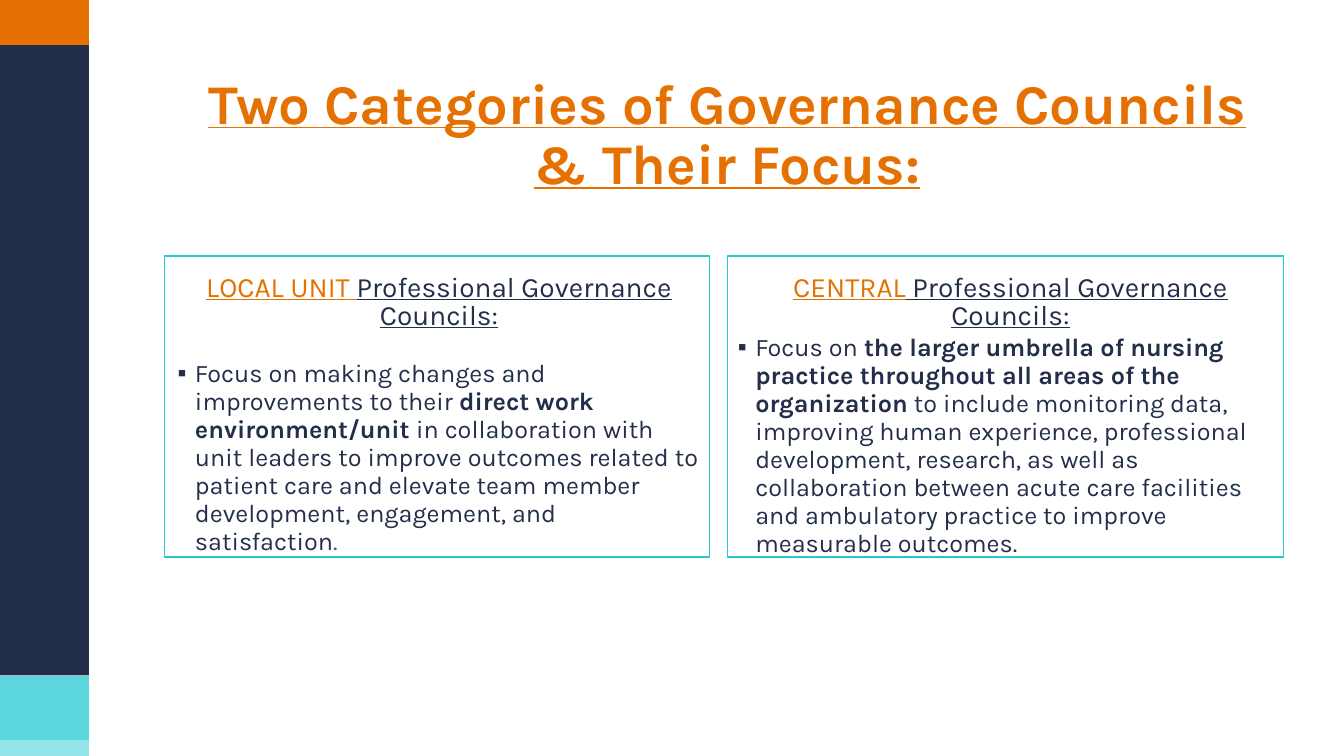
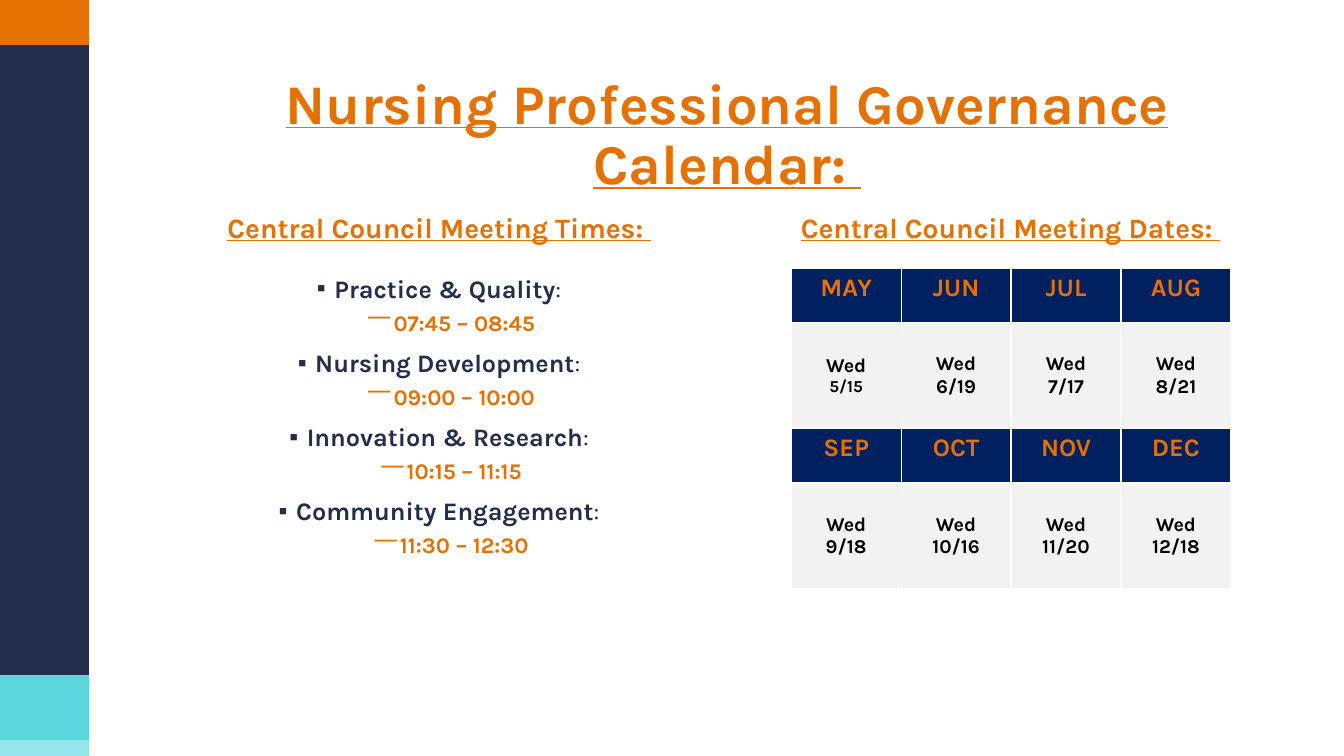
from lxml.etree import SubElement
from pptx import Presentation
from pptx.dml.color import RGBColor
from pptx.enum.shapes import MSO_SHAPE
from pptx.enum.text import MSO_ANCHOR, MSO_AUTO_SIZE, PP_ALIGN
from pptx.oxml.ns import qn
from pptx.util import Cm, Pt

FONT = "Karla"
ORANGE = RGBColor(0xE5, 0x71, 0x02)
NAVY = RGBColor(0x22, 0x2E, 0x4A)
TEAL = RGBColor(0x25, 0xC9, 0xD5)
AQUA = RGBColor(0x5C, 0xD6, 0xDD)
PALE_AQUA = RGBColor(0x93, 0xE5, 0xE9)
GRAY = RGBColor(0x59, 0x59, 0x59)
MONTH_BLUE = RGBColor(0x00, 0x20, 0x60)
DATE_GRAY = RGBColor(0xF2, 0xF2, 0xF2)
BLACK = RGBColor(0, 0, 0)

# Side bands: top and height in cm, colour
BAND_WIDTH = 2.24
BANDS = [(0, 1.14, ORANGE), (1.14, 15.88, NAVY),
         (17.04, 1.61, AQUA), (18.65, 0.4, PALE_AQUA)]

# Columns: left and width in cm, with their heading and body placeholders
COLUMNS = [(4.22, 13.69, 1, 2), (18.34, 14.25, 3, 4)]
HEADING_HEIGHT, BODY_HEIGHT = 1.47, 8.94

FOCUS_TITLE = "Two Categories of Governance Councils & Their Focus:"
# Runs are (text, colour, bold)
COUNCILS = [
    {"heading": [("LOCAL UNIT ", ORANGE, False),
                 ("Professional Governance Councils:", NAVY, False)],
     "focus": [("Focus on making changes and improvements to their ", NAVY, False),
               ("direct work environment/unit ", NAVY, True),
               ("in collaboration with unit leaders to improve outcomes related to "
                "patient care and elevate team member development, engagement, "
                "and satisfaction", NAVY, False),
               (".", GRAY, False)],
     "focus_top": 8.94, "frame": (4.14, 13.74)},
    {"heading": [("CENTRAL", ORANGE, False),
                 (" Professional Governance Councils:", NAVY, False)],
     "focus": [("Focus on ", NAVY, False),
               ("the larger umbrella of nursing practice throughout all areas of "
                "the organization", NAVY, True),
               (" to include monitoring data, improving human experience, "
                "professional development, research, as well as collaboration "
                "between acute care facilities and ambulatory practice to improve "
                "measurable outcomes.", NAVY, False)],
     "focus_top": 8.28, "frame": (18.34, 14)},
]
FRAME_TOP, FRAME_HEIGHT = 6.45, 7.59

CALENDAR_TITLE = "Nursing Professional Governance Calendar: "
CALENDAR_HEADINGS = ["Central Council Meeting Times: ",
                     "Central Council Meeting Dates: "]
MEETING_TIMES = [("Practice & Quality", "07:45 – 08:45"),
                 ("Nursing Development", "09:00 – 10:00"),
                 ("Innovation & Research", "10:15 – 11:15"),
                 ("Community Engagement", "11:30 – 12:30")]
MEETING_DATES = [[("MAY", "5/15"), ("JUN", "6/19"), ("JUL", "7/17"), ("AUG", "8/21")],
                 [("SEP", "9/18"), ("OCT", "10/16"), ("NOV", "11/20"), ("DEC", "12/18")]]
SMALL_DATE = "5/15"
MONTH_WIDTH, MONTH_HEIGHT, DATE_HEIGHT = 2.77, 1.37, 2.67


def place(shape, left, top, width, height):
    shape.left, shape.top = Cm(left), Cm(top)
    shape.width, shape.height = Cm(width), Cm(height)


def add_runs(paragraph, runs, size, underline=False):
    for text, color, bold in runs:
        run = paragraph.add_run()
        run.text = text
        font = run.font
        font.name, font.size = FONT, Pt(size)
        font.bold, font.underline = bold, underline
        font.color.rgb = color


def set_bullet(paragraph, mark, margin=0.0, hanging=0.0):
    """Give the paragraph a bullet, or none when mark is empty."""
    properties = paragraph._p.get_or_add_pPr()
    properties.set("marL", str(Cm(margin)))
    properties.set("indent", str(-Cm(hanging)))
    if mark:
        SubElement(properties, qn("a:buChar")).set("char", mark)
    else:
        SubElement(properties, qn("a:buNone"))


def open_frame(placeholder):
    frame = placeholder.text_frame
    frame.word_wrap = True
    frame.auto_size = MSO_AUTO_SIZE.NONE
    frame.vertical_anchor = MSO_ANCHOR.TOP
    return frame


def fill_heading(slide, column, top, runs):
    left, width, heading_idx, _ = COLUMNS[column]
    heading = slide.placeholders[heading_idx]
    place(heading, left, top, width, HEADING_HEIGHT)
    paragraph = open_frame(heading).paragraphs[0]
    set_bullet(paragraph, "")
    paragraph.alignment = PP_ALIGN.CENTER
    paragraph.line_spacing, paragraph.space_before = Pt(20), Pt(0)
    add_runs(paragraph, runs, 20, underline=True)


def fill_body(slide, column, top, items, alignment):
    """Fill a column's list with (level, runs) items."""
    left, width, _, body_idx = COLUMNS[column]
    body = slide.placeholders[body_idx]
    place(body, left, top, width, BODY_HEIGHT)
    frame = open_frame(body)
    for number, (level, runs) in enumerate(items):
        paragraph = frame.add_paragraph() if number else frame.paragraphs[0]
        paragraph.level = level
        mark, margin, hanging, size, spacing, before = (
            ("⎻", 1.27, 0.64, 16, 18, 5) if level else ("▪", 0.44, 0.44, 18, 20, 10))
        set_bullet(paragraph, mark, margin, hanging)
        paragraph.alignment = alignment
        paragraph.line_spacing = Pt(spacing)
        paragraph.space_before = Pt(before if number else 0)
        add_runs(paragraph, runs, size)


def add_titled_slide(prs, layout, title):
    slide = prs.slides.add_slide(layout)
    paragraph = open_frame(slide.shapes.title).paragraphs[0]
    paragraph.alignment = PP_ALIGN.CENTER
    paragraph.line_spacing = 0.9
    add_runs(paragraph, [(title, ORANGE, True)], 40, underline=True)
    return slide


def move_bands_to_layout(slide, layout):
    """Draw the side bands and hand them to the layout that all slides share."""
    for number, (top, height, color) in enumerate(BANDS):
        band = slide.shapes.add_shape(MSO_SHAPE.RECTANGLE, 0, Cm(top),
                                      Cm(BAND_WIDTH), Cm(height))
        band.shadow.inherit = False
        band.fill.solid()
        band.fill.fore_color.rgb = color
        band.line.fill.background()
        band._element.nvSpPr.cNvPr.set("id", str(100 + number))
        layout.shapes._spTree.insert(2 + number, band._element)


def build_focus(prs, layout):
    slide = add_titled_slide(prs, layout, FOCUS_TITLE)
    move_bands_to_layout(slide, layout)
    for column, council in enumerate(COUNCILS):
        fill_heading(slide, column, 6.81, council["heading"])
        fill_body(slide, column, council["focus_top"], [(0, council["focus"])],
                  PP_ALIGN.LEFT)
        left, width = council["frame"]
        outline = slide.shapes.add_shape(MSO_SHAPE.RECTANGLE, Cm(left), Cm(FRAME_TOP),
                                         Cm(width), Cm(FRAME_HEIGHT))
        outline.shadow.inherit = False
        outline.fill.background()
        outline.line.color.rgb = TEAL
        outline.line.width = Pt(1)


def fill_cell(cell, lines, color, background):
    """Write (text, size) lines, one paragraph each."""
    cell.fill.solid()
    cell.fill.fore_color.rgb = background
    for number, (text, size) in enumerate(lines):
        frame = cell.text_frame
        paragraph = frame.add_paragraph() if number else frame.paragraphs[0]
        paragraph.alignment = PP_ALIGN.CENTER
        add_runs(paragraph, [(text, color, True)], size)


def add_dates_table(slide):
    rows, columns = 2 * len(MEETING_DATES), len(MEETING_DATES[0])
    table = slide.shapes.add_table(
        rows, columns, Cm(19.94), Cm(6.76), Cm(columns * MONTH_WIDTH),
        Cm(rows // 2 * (MONTH_HEIGHT + DATE_HEIGHT))).table
    table.first_row = table.horz_banding = False
    for column in table.columns:
        column.width = Cm(MONTH_WIDTH)
    for block, months in enumerate(MEETING_DATES):
        month_row, date_row = 2 * block, 2 * block + 1
        table.rows[month_row].height = Cm(MONTH_HEIGHT)
        table.rows[date_row].height = Cm(DATE_HEIGHT)
        for column, (month, date) in enumerate(months):
            fill_cell(table.cell(month_row, column), [(month, 18)], ORANGE, MONTH_BLUE)
            date_cell = table.cell(date_row, column)
            date_cell.vertical_anchor = MSO_ANCHOR.MIDDLE
            date_size = 12 if date == SMALL_DATE else 14
            fill_cell(date_cell, [("Wed", 14), (date, date_size)], BLACK, DATE_GRAY)


def build_calendar(prs, layout):
    slide = add_titled_slide(prs, layout, CALENDAR_TITLE)
    for column, heading in enumerate(CALENDAR_HEADINGS):
        fill_heading(slide, column, 5.33, [(heading, ORANGE, True)])
    items = []
    for council, hours in MEETING_TIMES:
        items += [(0, [(council, NAVY, True), (":", NAVY, False)]),
                  (1, [(hours, ORANGE, True)])]
    fill_body(slide, 0, 6.81, items, PP_ALIGN.CENTER)
    unused_body = slide.placeholders[COLUMNS[1][3]]._element
    unused_body.getparent().remove(unused_body)
    add_dates_table(slide)


def main():
    prs = Presentation()
    prs.slide_width, prs.slide_height = Cm(33.87), Cm(19.05)
    layout = prs.slide_layouts.get_by_name("Comparison")
    place(layout.placeholders[0], 4.14, 1.78, 28.37, 3.23)
    build_focus(prs, layout)
    build_calendar(prs, layout)
    prs.save("out.pptx")


if __name__ == "__main__":
    main()
